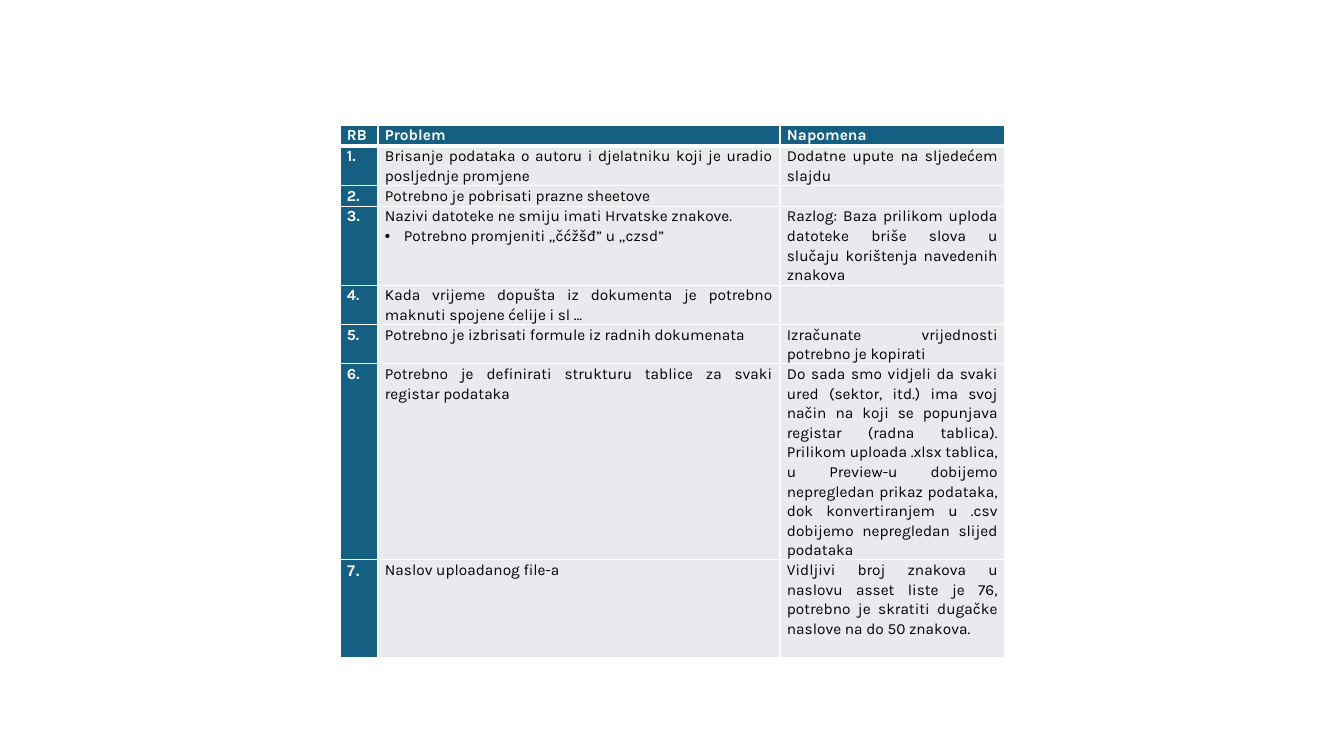
import pptx
import pptx.util
import pptx.dml.color
import pptx.enum.text
import pptx.oxml
import pptx.oxml.ns
from dataclasses import dataclass

PX = 914400 / 100.8
ALIGN = pptx.enum.text.PP_ALIGN


@dataclass(frozen=True)
class Theme:
    blue: str = "156082"
    gray: str = "E8EAED"
    white: str = "FFFFFF"
    black: str = "000000"
    font: str = "Karla"
    number_font: str = "Arial"
    size: int = 11
    leading: int = 14
    rule: int = 1
    header_rule: int = 3


theme = Theme()


def px(length):
    return pptx.util.Emu(round(length * PX))


def add_border(cell, side, points):
    props = cell._tc.get_or_add_tcPr()
    props.append(pptx.oxml.parse_xml(
        f'<a:ln{side} {pptx.oxml.ns.nsdecls("a")} w="{pptx.util.Pt(points)}">'
        f'<a:solidFill><a:srgbClr val="{theme.white}"/></a:solidFill></a:ln{side}>'))


rows = [
    ("RB", "Problem", "Napomena"),
    ("1.", "Brisanje podataka o autoru i djelatniku koji je uradio posljednje promjene",
     "Dodatne upute na sljedećem slajdu "),
    ("2.", "Potrebno je pobrisati prazne sheetove", ""),
    ("3.", "Nazivi datoteke ne smiju imati Hrvatske znakove. \n"
     "Potrebno promjeniti „čćžšđ” u „czsd”",
     "Razlog: Baza prilikom uploda datoteke briše slova u slučaju korištenja navedenih znakova"),
    ("4.", "Kada vrijeme dopušta iz dokumenta je potrebno maknuti spojene ćelije i sl ...", ""),
    ("5.", "Potrebno je izbrisati formule iz radnih dokumenata",
     "Izračunate vrijednosti potrebno je kopirati"),
    ("6.", "Potrebno je definirati strukturu tablice za svaki registar podataka",
     "Do sada smo vidjeli da svaki ured (sektor, itd.) ima svoj način na koji se popunjava "
     "registar (radna tablica). Prilikom uploada .xlsx tablica, u Preview-u dobijemo "
     "nepregledan prikaz podataka, dok konvertiranjem u .csv dobijemo nepregledan slijed podataka"),
    ("7.", "Naslov uploadanog file-a",
     "Vidljivi broj znakova u naslovu asset liste je 76, potrebno je skratiti dugačke "
     "naslove na do 50 znakova."),
]
column_widths = [38, 402, 225]
row_heights = [21, 39, 21, 79, 39, 39, 196, 98]

deck = pptx.Presentation()
deck.slide_width, deck.slide_height = px(1344), px(756)
page = deck.slides.add_slide(deck.slide_layouts[6])
table = page.shapes.add_table(
    len(rows), len(column_widths), px(340), px(125),
    px(sum(column_widths)), px(sum(row_heights))).table
table.horz_banding = False
for column, width in zip(table.columns, column_widths):
    column.width = px(width)

for row_index, texts in enumerate(rows):
    table.rows[row_index].height = px(row_heights[row_index])
    for column_index, text in enumerate(texts):
        cell = table.cell(row_index, column_index)
        strong = row_index == 0 or column_index == 0
        cell.margin_left = cell.margin_right = px(7)
        cell.margin_top = cell.margin_bottom = 0
        top = theme.header_rule if row_index == 1 else theme.rule
        bottom = theme.header_rule if row_index == 0 else theme.rule
        for side, points in (("L", theme.rule), ("R", theme.rule), ("T", top), ("B", bottom)):
            add_border(cell, side, points)
        cell.fill.solid()
        cell.fill.fore_color.rgb = pptx.dml.color.RGBColor.from_string(
            theme.blue if strong else theme.gray)
        for line_index, line in enumerate(text.split("\n")):
            frame = cell.text_frame
            para = frame.add_paragraph() if line_index else frame.paragraphs[0]
            numbered = column_index == 0 and row_index > 0
            para.alignment = ALIGN.LEFT if numbered else ALIGN.JUSTIFY
            para.line_spacing = pptx.util.Pt(theme.leading)
            para.font.size = pptx.util.Pt(theme.size)
            if line_index:
                props = para._p.get_or_add_pPr()
                props.set("marL", str(px(19)))
                props.set("indent", str(px(-19)))
                bullet_font = pptx.oxml.parse_xml(
                    f'<a:buFont {pptx.oxml.ns.nsdecls("a")} typeface="{theme.number_font}"/>')
                bullet = pptx.oxml.parse_xml(
                    f'<a:buChar {pptx.oxml.ns.nsdecls("a")} char="•"/>')
                props.find(pptx.oxml.ns.qn("a:lnSpc")).addnext(bullet_font)
                bullet_font.addnext(bullet)
            if line:
                span = para.add_run()
                span.text = line
                span.font.name = theme.number_font if line == "7." else theme.font
                span.font.size = pptx.util.Pt(theme.size)
                span.font.bold = strong
                span.font.color.rgb = pptx.dml.color.RGBColor.from_string(
                    theme.white if strong else theme.black)

deck.save("out.pptx")
